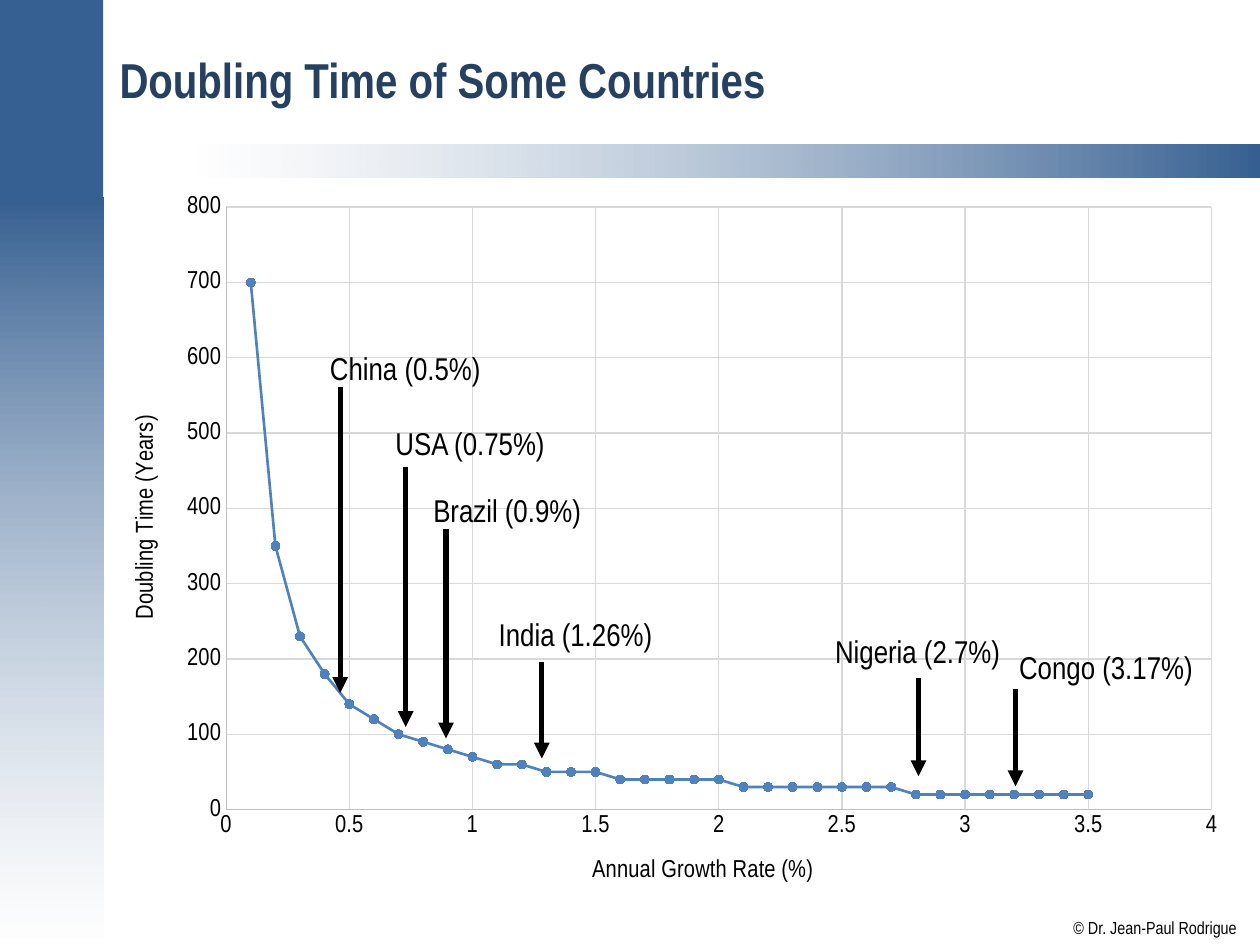
from lxml.etree import SubElement
from pptx import Presentation
from pptx.chart.data import XyChartData
from pptx.dml.color import RGBColor
from pptx.enum.chart import XL_CHART_TYPE, XL_MARKER_STYLE, XL_TICK_MARK
from pptx.enum.shapes import MSO_CONNECTOR, MSO_SHAPE
from pptx.enum.text import MSO_ANCHOR, MSO_AUTO_SIZE
from pptx.oxml import parse_xml
from pptx.oxml.ns import nsdecls, qn
from pptx.util import Inches, Pt

FONT = "Arial Narrow"
COLORS = {
    "band": "376092",
    "white": "FFFFFF",
    "title": "254061",
    "text": "000000",
    "curve": "4F81BD",
    "axis": "BFBFBF",
    "grid": "D9D9D9",
}
COUNTRIES = [
    ("USA (0.75%)", 3.04, 3.32, 1.4, 3.22, 3.71, 5.77),
    ("Brazil (0.9%)", 3.34, 3.85, 1.39, 3.54, 4.2, 5.86),
    ("China (0.5%)", 2.52, 2.72, 1.41, 2.7, 3.07, 5.5),
    ("India (1.26%)", 3.86, 4.83, 1.44, 4.3, 5.25, 6.02),
    ("Nigeria (2.7%)", 6.53, 4.97, 1.53, 7.29, 5.38, 6.16),
    ("Congo (3.17%)", 7.99, 5.09, 1.6, 8.06, 5.47, 6.24),
]


def color(name):
    return RGBColor.from_string(COLORS[name])


def set_font(font, size, ink="text", bold=False):
    font.name = FONT
    font.size = Pt(size)
    font.bold = bold
    font.color.rgb = color(ink)


def add_text(slide, text, left, top, width, height, size=18, ink="text",
             bold=False, wrap=False, anchor=MSO_ANCHOR.TOP, inset=True):
    label = slide.shapes.add_textbox(
        Inches(left), Inches(top), Inches(width), Inches(height))
    frame = label.text_frame
    frame.word_wrap = wrap
    frame.vertical_anchor = anchor
    if not wrap:
        frame.auto_size = MSO_AUTO_SIZE.SHAPE_TO_FIT_TEXT
    if not inset:
        frame.margin_left = frame.margin_right = 0
        frame.margin_top = frame.margin_bottom = 0
    run = frame.paragraphs[0].add_run()
    run.text = text
    set_font(run.font, size, ink, bold)


def add_band(slide, left, top, width, height, stops=None, angle=0):
    band = slide.shapes.add_shape(
        MSO_SHAPE.RECTANGLE,
        Inches(left), Inches(top), Inches(width), Inches(height))
    band.shadow.inherit = False
    band.line.fill.background()
    if stops is None:
        band.fill.solid()
        band.fill.fore_color.rgb = color("band")
        return
    band.fill.gradient()
    band.fill.gradient_angle = angle
    for stop, (name, _) in zip(band.fill.gradient_stops, stops):
        stop.color.rgb = color(name)
    for tint, (_, opacity) in zip(band._element.xpath(".//a:gs/a:srgbClr"), stops):
        if opacity < 100:
            SubElement(tint, qn("a:alpha")).set("val", str(opacity * 1000))


def add_arrow(slide, x, top, bottom):
    arrow = slide.shapes.add_connector(
        MSO_CONNECTOR.STRAIGHT, Inches(x), Inches(top), Inches(x), Inches(bottom))
    arrow.line.color.rgb = color("text")
    arrow.line.width = Pt(3)
    SubElement(arrow.line._get_or_add_ln(), qn("a:tailEnd")).set("type", "triangle")
    SubElement(arrow._element.spPr, qn("a:effectLst"))


def layout_xml(x, y, width=None, height=None):
    target = "" if width is None else '<c:layoutTarget val="inner"/>'
    size = "" if width is None else f'<c:w val="{width}"/><c:h val="{height}"/>'
    return parse_xml(
        f'<c:layout {nsdecls("c")}><c:manualLayout>{target}'
        '<c:xMode val="edge"/><c:yMode val="edge"/>'
        f'<c:x val="{x}"/><c:y val="{y}"/>{size}</c:manualLayout></c:layout>')


def place(element, layout, after=None):
    for old in element.findall(qn("c:layout")):
        element.remove(old)
    if after is None:
        element.insert(0, layout)
    else:
        element.find(qn(after)).addnext(layout)


def format_axis(axis, title, maximum, step, title_x, title_y):
    axis.minimum_scale = 0
    axis.maximum_scale = maximum
    axis.major_unit = step
    axis.major_tick_mark = axis.minor_tick_mark = XL_TICK_MARK.NONE
    axis.tick_labels.number_format = "General"
    axis.tick_labels.number_format_is_linked = False
    set_font(axis.tick_labels.font, 14)
    axis.has_major_gridlines = True
    for line, name in ((axis.format.line, "axis"),
                       (axis.major_gridlines.format.line, "grid")):
        line.color.rgb = color(name)
        line.width = Pt(0.75)
    run = axis.axis_title.text_frame.paragraphs[0].add_run()
    run.text = title
    set_font(run.font, 14)
    place(axis.axis_title._element, layout_xml(title_x, title_y), "c:tx")


def add_growth_chart(slide):
    data = XyChartData()
    doubling = data.add_series("Series 1")
    for tenths in range(1, 36):
        rate = tenths / 10
        doubling.add_data_point(rate, round(round(70 / rate), -1))
    chart = slide.shapes.add_chart(
        XL_CHART_TYPE.XY_SCATTER_LINES,
        Inches(0.83), Inches(1.43), Inches(9.02), Inches(5.79), data).chart
    chart.has_legend = False
    chart.has_title = False
    set_font(chart.font, 14)
    plot = chart.plots[0]
    plot.vary_by_categories = False
    format_axis(chart.category_axis, "Annual Growth Rate (%)", 4, 0.5, 0.425, 0.92)
    format_axis(chart.value_axis, "Doubling Time (Years)", 800, 100, 0.02, 0.316)
    place(chart._chartSpace.chart.plotArea, layout_xml(0.107, 0.037, 0.867, 0.826))
    curve = plot.series[0]
    curve.smooth = False
    curve.format.line.color.rgb = color("curve")
    curve.format.line.width = Pt(1.5)
    curve.marker.style = XL_MARKER_STYLE.CIRCLE
    curve.marker.size = 5
    curve.marker.format.fill.solid()
    curve.marker.format.fill.fore_color.rgb = color("curve")
    curve.marker.format.line.color.rgb = color("curve")


def main():
    deck = Presentation()
    deck.slide_width, deck.slide_height = Inches(10), Inches(7.5)
    slide = deck.slides.add_slide(deck.slide_layouts[6])
    add_band(slide, -0.01, 1.57, 0.83, 5.93, [("band", 100), ("white", 51)], 270)
    add_band(slide, 1.57, 1.15, 8.43, 0.26, [("white", 50), ("band", 100)])
    add_band(slide, -0.01, -0.01, 0.83, 1.58)
    add_text(slide, "© Dr. Jean-Paul Rodrigue", 8.52, 7.28, 1.3, 0.17,
             size=10, inset=False)
    add_text(slide, "Doubling Time of Some Countries", 0.85, 0.11, 8.98, 1.04,
             size=28, ink="title", bold=True, wrap=True, anchor=MSO_ANCHOR.MIDDLE)
    add_growth_chart(slide)
    for country, left, top, width, x, start, end in COUNTRIES:
        add_arrow(slide, x, start, end)
        add_text(slide, country, left, top, width, 0.4)
    deck.save("out.pptx")


if __name__ == "__main__":
    main()
